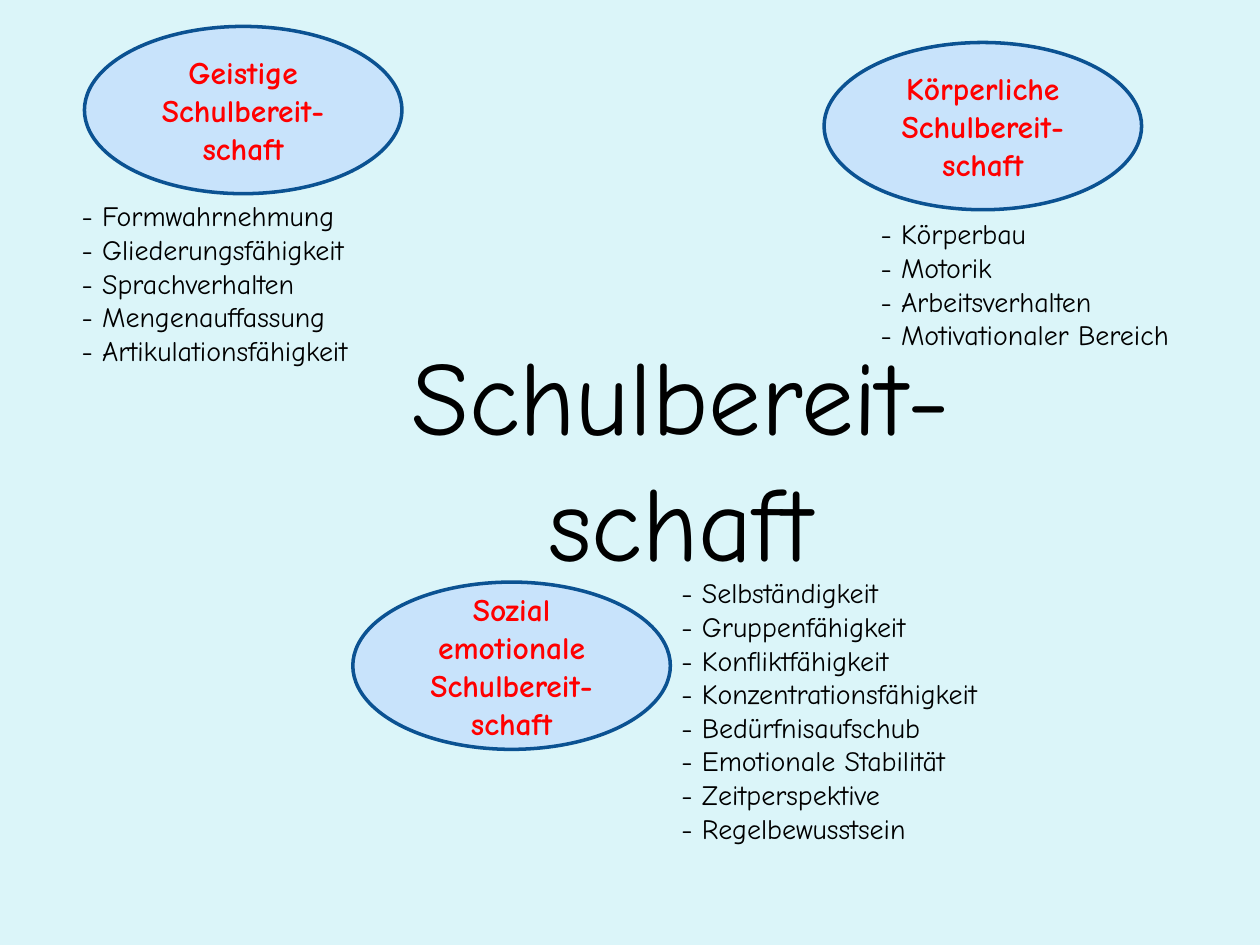
from pptx import Presentation
from pptx.dml.color import RGBColor
from pptx.enum.shapes import MSO_SHAPE
from pptx.enum.text import MSO_ANCHOR, MSO_AUTO_SIZE, PP_ALIGN
from pptx.util import Inches, Pt

TITLE = "Schulbereit-\vschaft"
GROUPS = [
    {"head": "Sozial emotionale Schulbereit- schaft",
     "oval": (28, 61.6), "list": (53.1, 60.3, 29.5),
     "items": ["Selbständigkeit", "Gruppenfähigkeit", "Konfliktfähigkeit",
               "Konzentrationsfähigkeit", "Bedürfnisaufschub",
               "Emotionale Stabilität", "Zeitperspektive", "Regelbewusstsein"]},
    {"head": "Geistige Schulbereit- schaft",
     "oval": (6.7, 2.8), "list": (5.5, 20.4, 27.6),
     "items": ["Formwahrnehmung", "Gliederungsfähigkeit", "Sprachverhalten",
               "Mengenauffassung", "Artikulationsfähigkeit"]},
    {"head": "Körperliche Schulbereit- schaft",
     "oval": (65.4, 4.5), "list": (68.9, 22.3, 27.6),
     "items": ["Körperbau", "Motorik", "Arbeitsverhalten",
               "Motivationaler Bereich"]},
]
OVAL = (25.2, 17.7)
ROW, PAD = 3.6, 1.3

deck = Presentation()
deck.slide_width, deck.slide_height = Inches(10), Inches(7.5)
slide = deck.slides.add_slide(deck.slide_layouts[5])


def color(code):
    return RGBColor.from_string(code)


def place(left, top, width, height):
    wide, high = deck.slide_width / 100, deck.slide_height / 100
    return (round(left * wide), round(top * high),
            round(width * wide), round(height * high))


def write(shape, lines, size, ink="000000", bold=False,
          align=PP_ALIGN.LEFT, anchor=MSO_ANCHOR.TOP,
          fit=MSO_AUTO_SIZE.NONE):
    frame = shape.text_frame
    frame.word_wrap = True
    frame.auto_size = fit
    frame.vertical_anchor = anchor
    frame.text = "\n".join(lines)
    for para in frame.paragraphs:
        para.alignment = align
        for run in para.runs:
            font = run.font
            font.name, font.size, font.bold = "Comic Neue", Pt(size), bold
            font.color.rgb = color(ink)


MID = {"align": PP_ALIGN.CENTER, "anchor": MSO_ANCHOR.MIDDLE}

back = slide.background.fill
back.solid()
back.fore_color.rgb = color("DBF5F9")

title = slide.shapes.title
title.left, title.top, title.width, title.height = place(18.5, 40.5, 63, 15.7)
write(title, [TITLE], 60, **MID)
title.text_frame.margin_left = Inches(0.9)

for group in GROUPS:
    oval = slide.shapes.add_shape(MSO_SHAPE.OVAL, *place(*group["oval"], *OVAL))
    oval.shadow.inherit = False
    oval.fill.solid()
    oval.fill.fore_color.rgb = color("C8E3FB")
    oval.line.color.rgb = color("0B5292")
    oval.line.width = Pt(2)
    write(oval, [group["head"]], 18, ink="FF0000", bold=True, **MID)

    items = group["items"]
    box = slide.shapes.add_textbox(*place(*group["list"], ROW * len(items) + PAD))
    write(box, [f"- {item}" for item in items], 16,
          fit=MSO_AUTO_SIZE.SHAPE_TO_FIT_TEXT)

deck.save("out.pptx")
